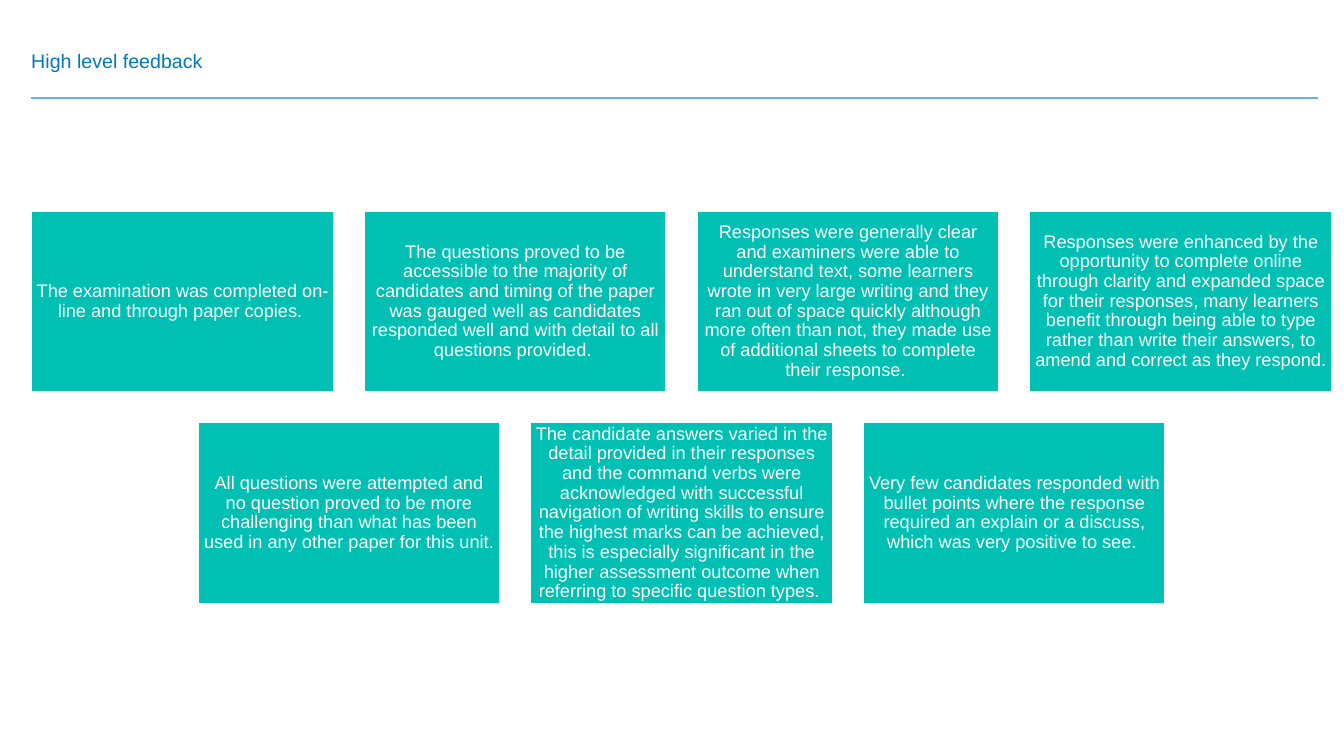
"""Build the high level feedback slide."""
from pptx import Presentation
from pptx.dml.color import RGBColor
from pptx.enum.shapes import MSO_CONNECTOR, MSO_SHAPE
from pptx.enum.text import MSO_ANCHOR, MSO_AUTO_SIZE, PP_ALIGN
from pptx.oxml.ns import qn
from pptx.util import Inches, Pt
from lxml import etree

RECTANGLE = MSO_SHAPE.RECTANGLE
STRAIGHT = MSO_CONNECTOR.STRAIGHT
MIDDLE, BOTTOM = MSO_ANCHOR.MIDDLE, MSO_ANCHOR.BOTTOM
LEFT, CENTER = PP_ALIGN.LEFT, PP_ALIGN.CENTER
NO_AUTOFIT = MSO_AUTO_SIZE.NONE

FONT = "Arial"
BLUE, LIGHT_BLUE, TEAL, WHITE = "007BB9", "65B2E6", "00BFB3", "FFFFFF"

MARGIN = 0.31
CARD_WIDTH, CARD_HEIGHT = 3.0, 1.8
CARD_GAP = 0.3
GRID_TOP = 2.09
COLUMNS = 4

FEEDBACK = [
    "The examination was completed on-line and through paper copies. ",
    "The questions proved to be accessible to the majority of candidates and timing of the "
    "paper was gauged well as candidates responded well and with detail to all questions "
    "provided. ",
    "Responses were generally clear and examiners were able to understand text, some learners "
    "wrote in very large writing and they ran out of space quickly although more often than "
    "not, they made use of additional sheets to complete their response. ",
    "Responses were enhanced by the opportunity to complete online through clarity and "
    "expanded space for their responses, many learners benefit through being able to type "
    "rather than write their answers, to amend and correct as they respond. ",
    "All questions were attempted and no question proved to be more challenging than what has "
    "been used in any other paper for this unit. ",
    "The candidate answers varied in the detail provided in their responses and the command "
    "verbs were acknowledged with successful navigation of writing skills to ensure the "
    "highest marks can be achieved, this is especially significant in the higher assessment "
    "outcome when referring to specific question types. ",
    "Very few candidates responded with bullet points where the response required an explain "
    "or a discuss, which was very positive to see. ",
]


def color(hex_value):
    """Return the colour for a hex string."""
    return RGBColor.from_string(hex_value)


def write_text(shape, text, size, hex_value, alignment, anchor, inset):
    """Fill a shape with one formatted paragraph."""
    frame = shape.text_frame
    frame.word_wrap = True
    frame.auto_size = NO_AUTOFIT
    frame.vertical_anchor = anchor
    frame.margin_left = frame.margin_right = Inches(inset)
    frame.margin_top = frame.margin_bottom = Inches(inset)
    paragraph = frame.paragraphs[0]
    paragraph.alignment = alignment
    paragraph.line_spacing = 0.9
    paragraph.space_before = Pt(0)
    run = paragraph.add_run()
    run.text = text
    run.font.name = FONT
    run.font.size = Pt(size)
    run.font.color.rgb = color(hex_value)


def add_title(slide, text):
    """Place and format the title placeholder."""
    title = slide.shapes.title
    title.left, title.top = Inches(MARGIN), Inches(0.23)
    title.width, title.height = Inches(11.18), Inches(0.49)
    write_text(title, text, 14, BLUE, LEFT, BOTTOM, 0)


def add_rule(slide):
    """Draw the line below the title."""
    top = Inches(0.97)
    rule = slide.shapes.add_connector(STRAIGHT, Inches(MARGIN), top, Inches(13.07), top)
    rule.line.color.rgb = color(LIGHT_BLUE)
    rule.line.width = Pt(1.75)
    etree.SubElement(rule._element.spPr, qn("a:effectLst"))


def add_card(slide, left, top, text):
    """Add one feedback card."""
    card = slide.shapes.add_shape(
        RECTANGLE, Inches(left), Inches(top), Inches(CARD_WIDTH), Inches(CARD_HEIGHT)
    )
    card.shadow.inherit = False
    card.fill.solid()
    card.fill.fore_color.rgb = color(TEAL)
    card.line.color.rgb = color(WHITE)
    card.line.width = Pt(1.5)
    write_text(card, text, 13, WHITE, CENTER, MIDDLE, 0.05)


def add_cards(slide, texts):
    """Lay the cards out in rows, centring a short last row."""
    step = CARD_WIDTH + CARD_GAP
    for index, text in enumerate(texts):
        row, column = divmod(index, COLUMNS)
        row_length = min(COLUMNS, len(texts) - row * COLUMNS)
        left = MARGIN + (column + (COLUMNS - row_length) / 2) * step
        add_card(slide, left, GRID_TOP + row * (CARD_HEIGHT + CARD_GAP), text)


def main():
    """Build and save the presentation."""
    presentation = Presentation()
    presentation.slide_width = Inches(13.33)
    presentation.slide_height = Inches(7.5)
    slide = presentation.slides.add_slide(presentation.slide_layouts[5])
    add_rule(slide)
    add_title(slide, "High level feedback")
    add_cards(slide, FEEDBACK)
    presentation.save("out.pptx")


if __name__ == "__main__":
    main()
